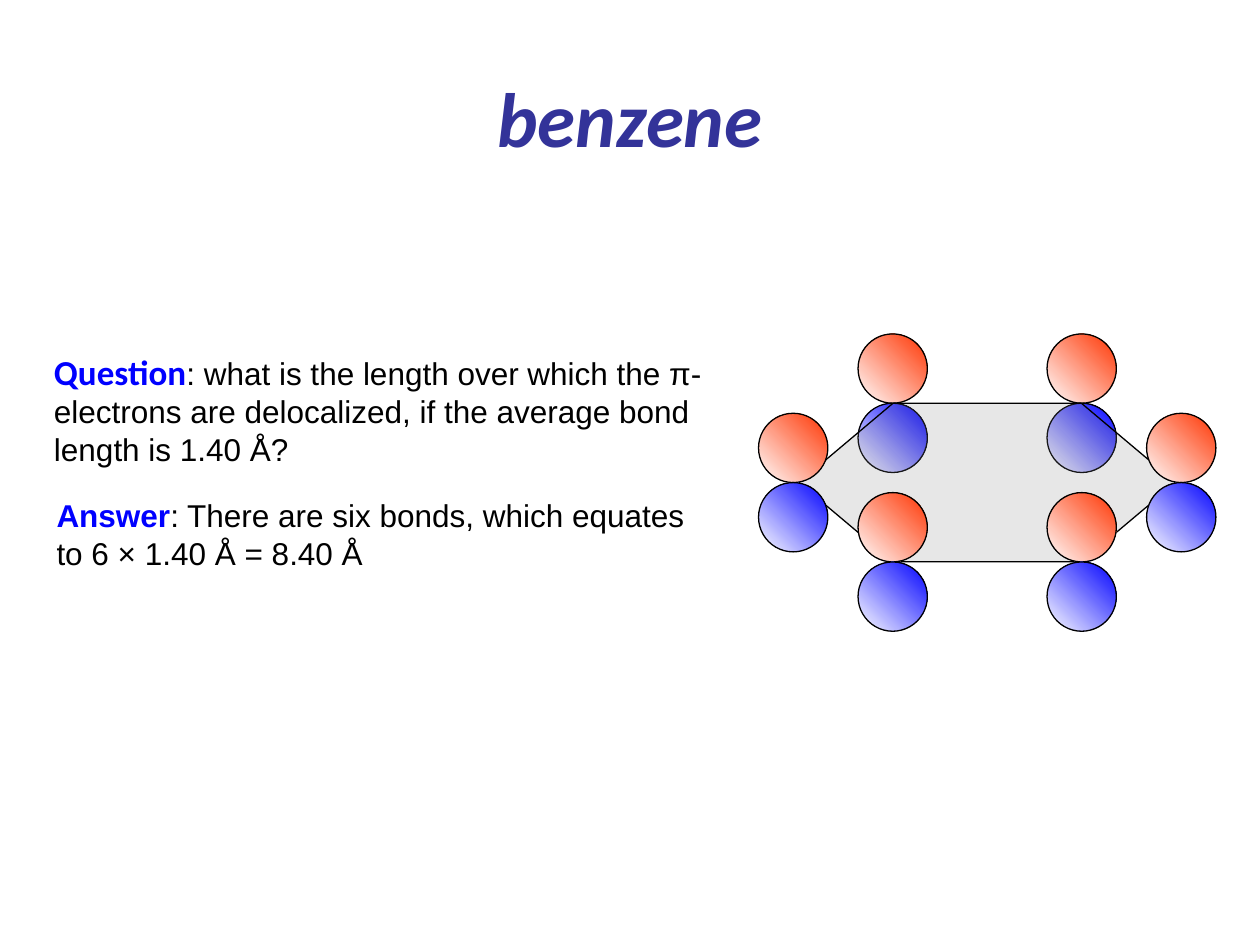
from lxml import etree
from pptx import Presentation
from pptx import util as u
from pptx.dml import color
from pptx.enum import shapes, text
from pptx.oxml import ns


def rgb(hex_code):
    return color.RGBColor.from_string(hex_code)


class OrbitalSlide:
    """Holds the style and the current slide."""

    BLACK, WHITE = "000000", "FFFFFF"
    POSITIVE, NEGATIVE = "FF3300", "0000FF"
    LOBE = 0.55
    TITLE = dict(name="Calibri", size=u.Pt(44), bold=True, italic=True, color="333399")
    BODY = dict(name="Arial", size=u.Pt(18), bold=False, color=BLACK)
    LABEL = dict(BODY, bold=True, color="0000FF")

    def __init__(self, deck):
        self.slide = deck.slides.add_slide(deck.slide_layouts[5])

    def place(self, part, left, top, width, height):
        for side, inches in dict(left=left, top=top, width=width, height=height).items():
            setattr(part, side, u.Inches(inches))

    def add_words(self, paragraph, words, style):
        run = paragraph.add_run()
        run.text = words
        for key, value in style.items():
            if key == "color":
                run.font.color.rgb = rgb(value)
            else:
                setattr(run.font, key, value)

    def title(self, words, *box):
        heading = self.slide.shapes.title
        self.place(heading, *box)
        heading.text_frame.vertical_anchor = text.MSO_ANCHOR.MIDDLE
        line = heading.text_frame.paragraphs[0]
        line.alignment = text.PP_ALIGN.CENTER
        self.add_words(line, words, self.TITLE)

    def statement(self, label, words, *box, **label_changes):
        frame = self.slide.shapes.add_textbox(*map(u.Inches, box)).text_frame
        frame.word_wrap = True
        frame.auto_size = text.MSO_AUTO_SIZE.SHAPE_TO_FIT_TEXT
        self.add_words(frame.paragraphs[0], label, dict(self.LABEL, **label_changes))
        self.add_words(frame.paragraphs[0], words, self.BODY)

    def outlined(self, parent, kind, *box):
        figure = parent.add_shape(kind, *map(u.Inches, box))
        figure.shadow.inherit = False
        figure.line.color.rgb = rgb(self.BLACK)
        figure.line.width = u.Pt(0.75)
        return figure

    def orbital(self, left, top):
        """A p orbital: two touching lobes, grouped."""
        pair = self.slide.shapes.add_group_shape().shapes
        for row, tint in enumerate((self.POSITIVE, self.NEGATIVE)):
            lobe = self.outlined(pair, shapes.MSO_SHAPE.OVAL, left,
                                 top + row * self.LOBE, self.LOBE, self.LOBE)
            lobe.fill.gradient()
            lobe.fill.gradient_angle = 45
            for stop, shade in zip(lobe.fill.gradient_stops, (self.WHITE, tint)):
                stop.color.rgb = rgb(shade)

    def ring(self, *box):
        """The translucent carbon ring."""
        hexagon = self.outlined(self.slide.shapes, shapes.MSO_SHAPE.HEXAGON, *box)
        hexagon.adjustments[0] = 0.594
        hexagon.fill.solid()
        hexagon.fill.fore_color.rgb = rgb("808080")
        tint = hexagon.fill._xPr.find(".//" + ns.qn("a:srgbClr"))
        etree.SubElement(tint, ns.qn("a:alpha"), val="19000")


def main():
    deck = Presentation()
    deck.slide_width, deck.slide_height = u.Inches(10), u.Inches(7.5)
    benzene = OrbitalSlide(deck)

    # Title and text
    benzene.title("benzene", 0.5, 0.3, 9, 1.25)
    benzene.statement(
        "Question",
        ": what is the length over which the π-electrons are delocalized, "
        "if the average bond length is 1.40 Å?",
        0.33, 2.73, 5.38, 1.03, name="Calibri", size=u.Pt(20))
    benzene.statement(
        "Answer", ": There are six bonds, which equates to 6 × 1.40 Å = 8.40 Å",
        0.35, 3.89, 5.22, 1)

    # Molecule: back orbitals, ring, then side and front orbitals
    inner_left, inner_right = 6.81, 8.31
    outer_left, outer_right = 6.02, 9.1
    back, middle, front = 2.65, 3.28, 3.91
    for left in (inner_left, inner_right):
        benzene.orbital(left, back)
    benzene.ring(6.34, 3.2, 2.99, 1.26)
    for left, top in ((outer_left, middle), (inner_left, front),
                      (inner_right, front), (outer_right, middle)):
        benzene.orbital(left, top)

    deck.save("out.pptx")


if __name__ == "__main__":
    main()
